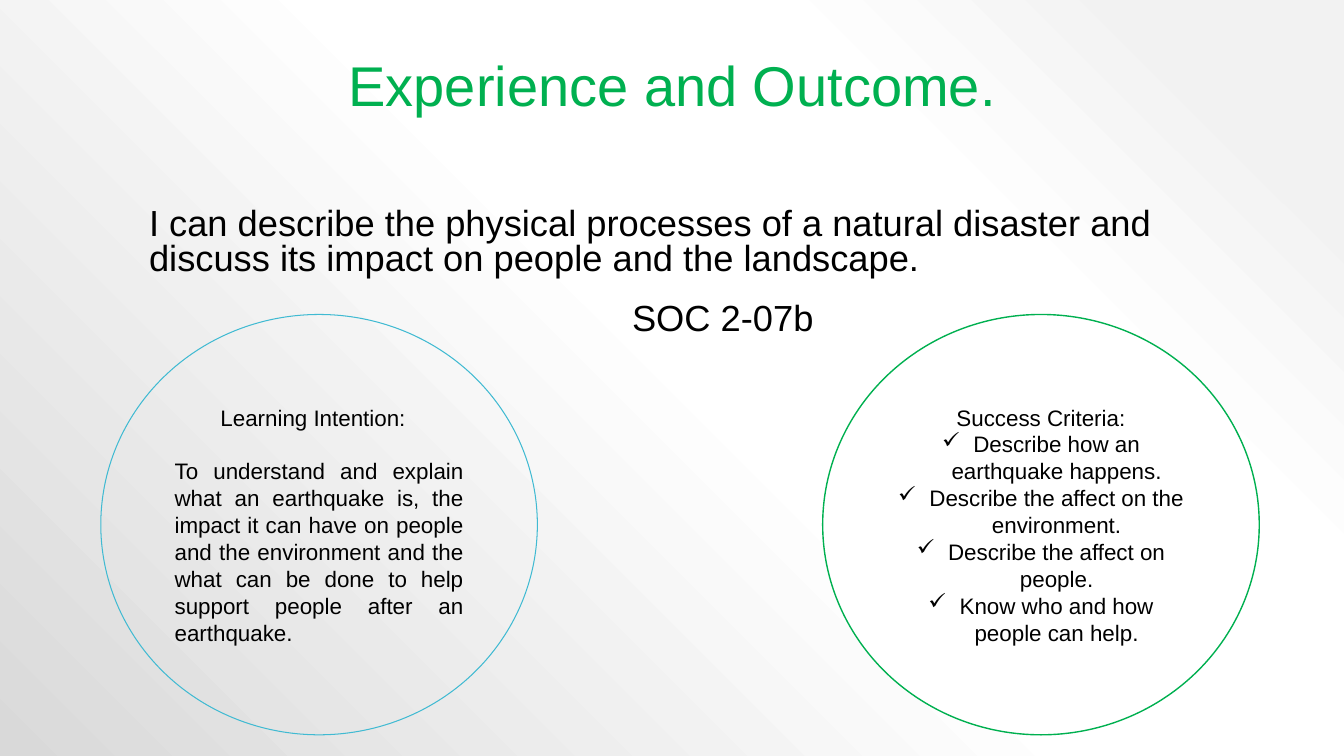
import pptx
import pptx.util
import pptx.oxml
import pptx.oxml.ns
import pptx.dml.color
import pptx.enum.shapes
import pptx.enum.text
import lxml.etree

Inches = pptx.util.Inches
Pt = pptx.util.Pt
Align = pptx.enum.text.PP_ALIGN
Anchor = pptx.enum.text.MSO_ANCHOR
qn = pptx.oxml.ns.qn

GREEN = pptx.dml.color.RGBColor(0x00, 0xB0, 0x50)
BLUE = pptx.dml.color.RGBColor(0x40, 0xBA, 0xD2)
WHITE = pptx.dml.color.RGBColor(0xFF, 0xFF, 0xFF)
BLACK = pptx.dml.color.RGBColor(0, 0, 0)


def write(frame, text, size=16, color=BLACK, align=Align.CENTER, line=None,
          before=0, after=0, left=0, right=0, hang=0, bullet=None):
    para = frame.paragraphs[0]
    if para.runs:
        para = frame.add_paragraph()
    para.alignment = align
    para.space_before = Pt(before)
    para.space_after = Pt(after)
    if line:
        para.line_spacing = line
    run = para.add_run()
    run.text = text
    run.font.name = "Arial"
    run.font.size = Pt(size)
    run.font.color.rgb = color
    props = para._p.get_or_add_pPr()
    for key, val in (("marL", left), ("marR", right), ("indent", hang)):
        props.set(key, str(Inches(val)))
    if bullet:
        lxml.etree.SubElement(props, qn("a:buChar")).set("char", bullet)


deck = pptx.Presentation()
deck.slide_width = Inches(13.33)
deck.slide_height = Inches(7.5)
slide = deck.slides.add_slide(deck.slide_layouts[6])

stops = ""
for place, shade in ((10, "F2F2F2"), (28, "FFFFFF"), (48, "FFFFFF"), (100, "D9D9D9")):
    stops += f'<a:gs pos="{place * 1000}"><a:srgbClr val="{shade}"/></a:gs>'
back = pptx.oxml.parse_xml(
    f'<p:bg {pptx.oxml.ns.nsdecls("p", "a")}><p:bgPr><a:gradFill rotWithShape="1">'
    f'<a:gsLst>{stops}</a:gsLst><a:path path="circle">'
    '<a:fillToRect l="100000" b="100000"/></a:path></a:gradFill>'
    '<a:effectLst/></p:bgPr></p:bg>')
slide.element.cSld.insert(0, back)

title = slide.shapes.add_textbox(Inches(1.33), Inches(0.3), Inches(10.67), Inches(0.93)).text_frame
title.word_wrap = True
title.vertical_anchor = Anchor.BOTTOM
write(title, "Experience and Outcome.", size=40, color=GREEN, line=0.9)

body = slide.shapes.add_textbox(Inches(1.33), Inches(2.02), Inches(11.22), Inches(1.5)).text_frame
body.word_wrap = True
for text, left in (
    ("I can describe the physical processes of a natural disaster and "
     "discuss its impact on people and the landscape.", 0.05),
    ("SOC 2-07b", 4.84),
):
    write(body, text, size=25.9, align=Align.LEFT, line=0.8, before=18, left=left)

frames = []
for left, color, width in ((1, BLUE, 0.75), (8.16, GREEN, 1)):
    ring = slide.shapes.add_shape(
        pptx.enum.shapes.MSO_SHAPE.OVAL, Inches(left), Inches(3.12), Inches(4.33), Inches(4.17))
    ring.shadow.inherit = False
    ring.fill.background()
    ring.line.color.rgb = color
    ring.line.width = Pt(width)
    frame = ring.text_frame
    frame.word_wrap = True
    frame.vertical_anchor = Anchor.MIDDLE
    frames.append(frame)
ring.fill.solid()
ring.fill.fore_color.rgb = WHITE

aim, goals = frames
write(aim, "Learning Intention:", after=19.2, right=0.12)
write(aim, "To understand and explain what an earthquake is, the impact it can have on people "
      "and the environment and the what can be done to help support people after an earthquake.",
      align=Align.JUSTIFY)

write(goals, "Success Criteria:")
for goal in (
    "Describe how an earthquake happens.",
    "Describe the affect on the environment.",
    "Describe the affect on people.",
    "Know who and how people can help.",
):
    write(goals, goal, left=0.31, hang=-0.31, bullet="✓")

deck.save("out.pptx")
